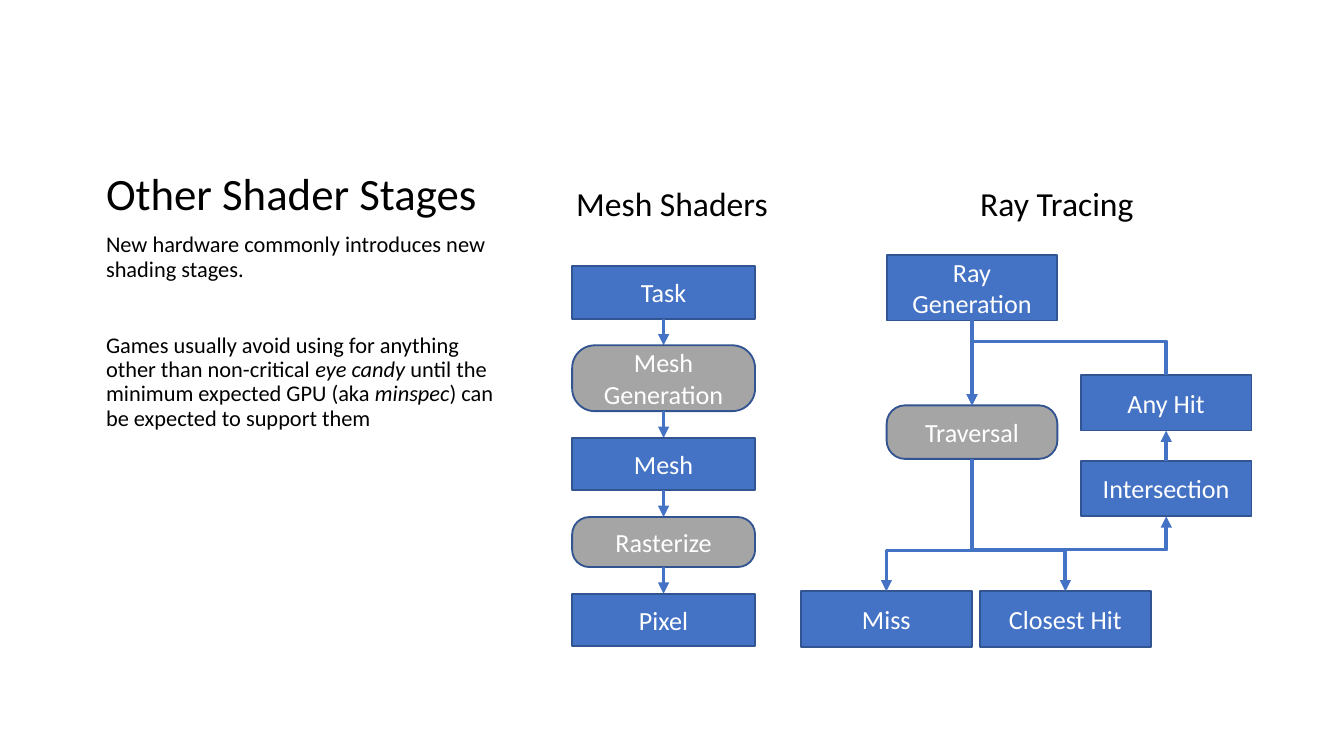
from lxml import etree
from pptx import Presentation
from pptx.dml.color import RGBColor
from pptx.enum import shapes, text
from pptx.oxml.ns import qn
from pptx.util import Pt

BLUE = RGBColor(0x44, 0x72, 0xC4)
NAVY = RGBColor(0x32, 0x54, 0x91)
GREY = RGBColor(0xA5, 0xA5, 0xA5)
WHITE = RGBColor(0xFF, 0xFF, 0xFF)
BLACK = RGBColor(0, 0, 0)


class Deck:
    font = "Calibri"

    def __init__(self, width, height):
        self.prs = Presentation()
        self.prs.slide_width, self.prs.slide_height = Pt(width), Pt(height)

    def add_slide(self):
        self.s = self.prs.slides.add_slide(self.prs.slide_layouts[7])
        unused = self.s.placeholders[1].element
        unused.getparent().remove(unused)

    def run(self, p, words, size, color=BLACK, italic=False):
        r = p.add_run()
        r.text = words
        f = r.font
        f.name, f.size, f.bold, f.italic = self.font, Pt(size), False, italic
        f.color.rgb = color

    def placeholder(self, idx, x, y, w, h, anchor, size, paragraphs):
        sp = self.s.placeholders[idx]
        sp.left, sp.top, sp.width, sp.height = Pt(x), Pt(y), Pt(w), Pt(h)
        tf = sp.text_frame
        tf.auto_size = text.MSO_AUTO_SIZE.NONE
        tf.vertical_anchor = anchor
        for i, (before, runs) in enumerate(paragraphs):
            p = tf.add_paragraph() if i else tf.paragraphs[0]
            p.alignment = text.PP_ALIGN.LEFT
            p.line_spacing, p.space_before = 0.9, Pt(before)
            for words, italic in runs:
                self.run(p, words, size, italic=italic)

    def heading(self, words, x, y, w, h):
        tf = self.s.shapes.add_textbox(Pt(x), Pt(y), Pt(w), Pt(h)).text_frame
        tf.word_wrap = False
        tf.auto_size = text.MSO_AUTO_SIZE.SHAPE_TO_FIT_TEXT
        p = tf.paragraphs[0]
        p.alignment = text.PP_ALIGN.CENTER
        self.run(p, words, 18)

    def stage(self, words, x, y, w, h, fixed=False):
        kind = shapes.MSO_SHAPE.ROUNDED_RECTANGLE if fixed else shapes.MSO_SHAPE.RECTANGLE
        sp = self.s.shapes.add_shape(kind, Pt(x), Pt(y), Pt(w), Pt(h))
        if fixed:
            sp.adjustments[0] = 0.344
        sp.shadow.inherit = False
        sp.fill.solid()
        sp.fill.fore_color.rgb = GREY if fixed else BLUE
        sp.line.color.rgb, sp.line.width = NAVY, Pt(1)
        tf = sp.text_frame
        tf.word_wrap = True
        tf.vertical_anchor = text.MSO_ANCHOR.MIDDLE
        p = tf.paragraphs[0]
        p.alignment = text.PP_ALIGN.CENTER
        self.run(p, words, 14, WHITE)

    def arrow(self, x1, y1, x2, y2, kind=shapes.MSO_CONNECTOR.STRAIGHT):
        c = self.s.shapes.add_connector(kind, Pt(x1), Pt(y1), Pt(x2), Pt(y2))
        c.line.color.rgb, c.line.width = BLUE, Pt(2)
        pr = c._element.spPr
        etree.SubElement(pr.find(qn("a:ln")), qn("a:tailEnd"), type="triangle")
        etree.SubElement(pr, qn("a:effectLst"))
        return pr

    def elbow(self, x1, y1, x2, y2, bend_y):
        cx, cy = (x1 + x2) / 2, (y1 + y2) / 2
        dx, dy = abs(x2 - x1) / 2, (y2 - y1) / 2
        pr = self.arrow(cx - dy, cy - dx, cx + dy, cy + dx, shapes.MSO_CONNECTOR.ELBOW)
        xfrm = pr.find(qn("a:xfrm"))
        xfrm.set("rot", str((270 if x2 > x1 else 90) * 60000))
        if x2 > x1:
            xfrm.set("flipH", "1")
        bend = round((bend_y - y1) / (y2 - y1) * 100000)
        guides = pr.find(qn("a:prstGeom")).find(qn("a:avLst"))
        etree.SubElement(guides, qn("a:gd"), name="adj1", fmla=f"val {bend}")


def main():
    deck = Deck(720, 405)
    deck.add_slide()
    deck.placeholder(0, 49.6, 27, 232.3, 94.5, text.MSO_ANCHOR.BOTTOM, 24,
                     [(0, [("Other Shader Stages", False)])])
    deck.placeholder(2, 49.6, 121.5, 232.3, 225.1, text.MSO_ANCHOR.TOP, 12, [
        (7.5, [("New hardware commonly introduces new shading stages.", False)]),
        (28, [("Games usually avoid using for anything other than non-critical ", False),
              ("eye candy", True),
              (" until the minimum expected GPU (aka ", False),
              ("minspec", True),
              (") can be expected to support them", False)])])

    deck.heading("Mesh Shaders", 301, 94.5, 118, 29)
    deck.heading("Ray Tracing", 517.7, 94.5, 97, 29)

    x, y, w, gap = 306.5, 142.6, 98, 14.3
    mesh_stages = [("Task", 28.1, False), ("Mesh Generation", 35.3, True), ("Mesh", 28.1, False),
                   ("Rasterize", 26.8, True), ("Pixel", 28.1, False)]
    for i, (words, h, fixed) in enumerate(mesh_stages):
        if i:
            deck.arrow(x + w / 2, y - gap, x + w / 2, y)
        deck.stage(words, x, y, w, h, fixed)
        y += h + gap

    w, h = 91.5, 29.8
    main_x, hit_x, miss_x, closest_x = 475, 579, 429.1, 525
    gen_y, any_y, trav_y, inter_y, end_y = 136.7, 200.9, 217.2, 246.8, 316.8
    gen_h, trav_h = 35, 28.7
    for words, sx, sy, sh, fixed in [
            ("Ray Generation", main_x, gen_y, gen_h, False),
            ("Any Hit", hit_x, any_y, h, False),
            ("Intersection", hit_x, inter_y, h, False),
            ("Traversal", main_x, trav_y, trav_h, True),
            ("Miss", miss_x, end_y, h, False),
            ("Closest Hit", closest_x, end_y, h, False)]:
        deck.stage(words, sx, sy, w, sh, fixed)

    main_c, hit_c, miss_c, closest_c = (sx + w / 2 for sx in (main_x, hit_x, miss_x, closest_x))
    trav_end = trav_y + trav_h
    deck.arrow(main_c, gen_y + gen_h, main_c, trav_y)
    deck.arrow(hit_c, inter_y, hit_c, any_y + h)
    deck.elbow(hit_c, any_y, main_c, trav_y, 182.9)
    deck.elbow(main_c, trav_end, hit_c, inter_y + h, 294.4)
    for end_c in (miss_c, closest_c):
        deck.elbow(main_c, trav_end, end_c, end_y, 294.9)

    deck.prs.save("out.pptx")


if __name__ == "__main__":
    main()
